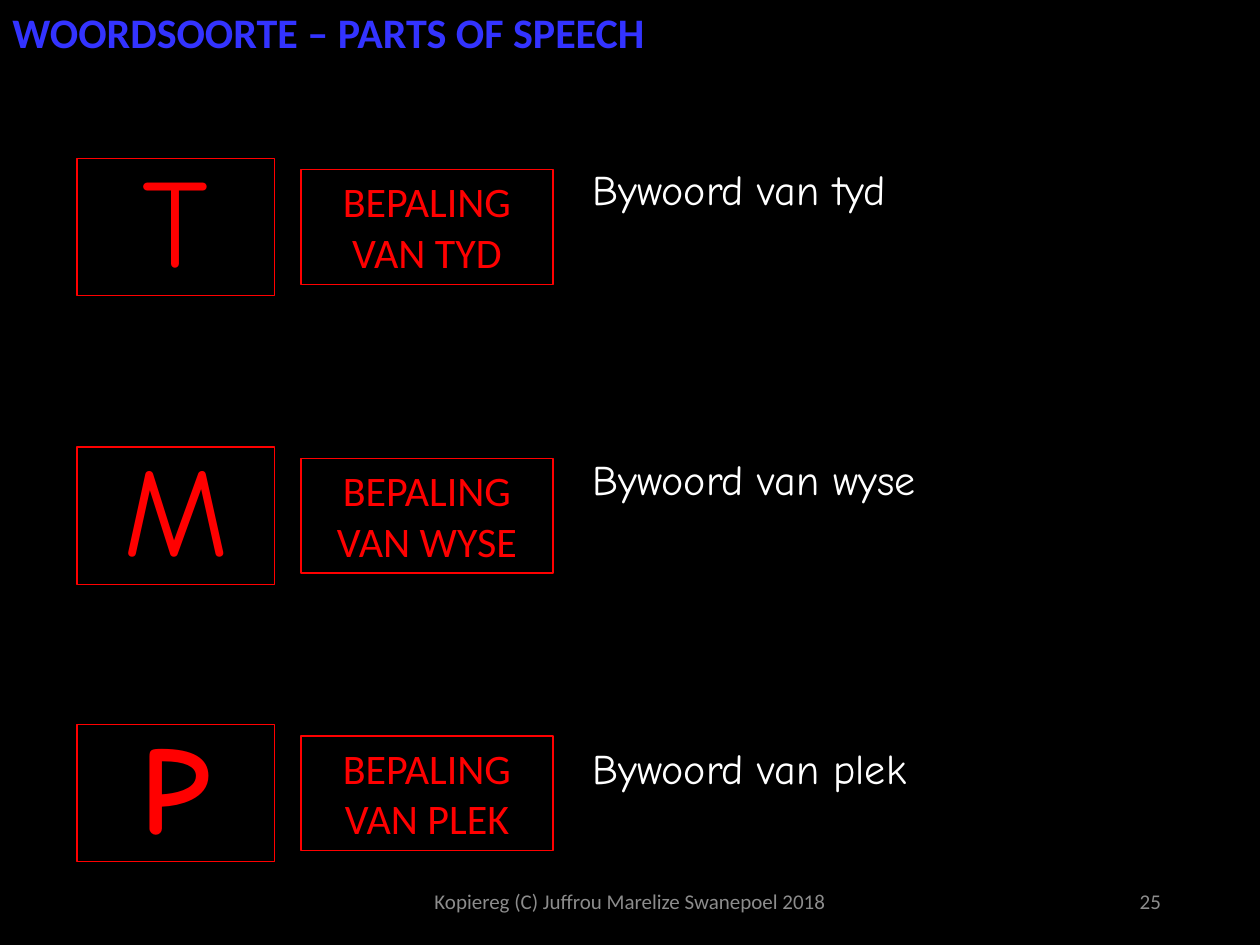
from dataclasses import dataclass

from pptx import Presentation
from pptx.dml.color import RGBColor
from pptx.enum.shapes import MSO_SHAPE as Shape
from pptx.enum.text import MSO_ANCHOR as Anchor, MSO_AUTO_SIZE as AutoSize, PP_ALIGN as Align
from pptx.util import Pt

COLORS = {
    "black": "000000",
    "red": "FF0000",
    "white": "FFFFFF",
    "blue": "3333FF",
    "grey": "8C8C8C",
}
SANS, HAND = "Calibri", "Comic Neue"


@dataclass(frozen=True)
class Box:
    left: float
    top: float
    width: float
    height: float

    def lengths(self) -> tuple:
        return Pt(self.left), Pt(self.top), Pt(self.width), Pt(self.height)


@dataclass(frozen=True)
class Style:
    font: str
    size: float
    color: str
    bold: bool = False
    align: Align = Align.LEFT
    anchor: Anchor = Anchor.TOP
    grow: bool = False


@dataclass(frozen=True)
class Adverbial:
    letter: str
    label: str
    adverb: str
    top: float
    adverb_top: float
    bold: bool = False


LABEL = Style(SANS, 24, "red", align=Align.CENTER, grow=True)
ADVERB = Style(HAND, 24, "white", grow=True)
TITLE = Style(SANS, 24, "blue", bold=True, anchor=Anchor.MIDDLE, grow=True)
FOOTER = Style(SANS, 12, "grey", align=Align.CENTER, anchor=Anchor.MIDDLE)
PAGE_NUMBER = Style(SANS, 12, "grey", align=Align.RIGHT, anchor=Anchor.MIDDLE)

ADVERBIALS = [
    Adverbial("T", "BEPALING VAN TYD", "Bywoord van tyd", 90.5, 90),
    Adverbial("M", "BEPALING VAN WYSE", "Bywoord van wyse", 255.5, 255.5),
    Adverbial("P", "BEPALING VAN PLEK", "Bywoord van plek", 414, 420.5, bold=True),
]


def rgb(name: str) -> RGBColor:
    return RGBColor.from_string(COLORS[name])


def write(shape, text: str, style: Style):
    """Put one styled paragraph in the shape and return it."""
    frame = shape.text_frame
    frame.word_wrap = True
    frame.auto_size = AutoSize.SHAPE_TO_FIT_TEXT if style.grow else AutoSize.NONE
    frame.vertical_anchor = style.anchor
    paragraph = frame.paragraphs[0]
    paragraph.text = text
    paragraph.alignment = style.align
    font = paragraph.font
    font.name, font.size, font.bold = style.font, Pt(style.size), style.bold
    font.color.rgb = rgb(style.color)
    return paragraph


def add_text(slide, box: Box, text: str, style: Style) -> None:
    write(slide.shapes.add_textbox(*box.lengths()), text, style)


def add_frame(slide, box: Box):
    """Add a rectangle with a thin red outline."""
    frame = slide.shapes.add_shape(Shape.RECTANGLE, *box.lengths())
    frame.shadow.inherit = False
    frame.fill.background()
    frame.line.color.rgb = rgb("red")
    frame.line.width = Pt(0.75)
    return frame


def add_adverbial(slide, item: Adverbial) -> None:
    # Large initial
    initial = add_frame(slide, Box(44, item.top, 113, 78.5))
    initial.fill.solid()
    initial.fill.fore_color.rgb = rgb("black")
    style = Style(HAND, 72, "red", item.bold, Align.CENTER, Anchor.MIDDLE)
    write(initial, item.letter, style).line_spacing = 0.9
    text = initial.text_frame
    text.margin_left = text.margin_right = text.margin_top = text.margin_bottom = Pt(7.2)

    # Name of the adverbial, then its adverb
    write(add_frame(slide, Box(172, item.top + 6.5, 144, 65.5)), item.label, LABEL)
    add_text(slide, Box(331.5, item.adverb_top, 377, 36), item.adverb, ADVERB)


def main() -> None:
    deck = Presentation()
    deck.slide_width, deck.slide_height = Pt(720), Pt(540)
    slide = deck.slides.add_slide(deck.slide_layouts[6])
    slide.background.fill.solid()
    slide.background.fill.fore_color.rgb = rgb("black")

    # Title
    add_text(slide, Box(0, 0, 390, 36), "WOORDSOORTE – PARTS OF SPEECH", TITLE)

    # Rows
    for item in ADVERBIALS:
        add_adverbial(slide, item)

    # Footer
    add_text(slide, Box(238.5, 500.5, 243, 28.75),
             "Kopiereg (C) Juffrou Marelize Swanepoel 2018", FOOTER)
    add_text(slide, Box(508.5, 500.5, 162, 28.75), "25", PAGE_NUMBER)

    deck.save("out.pptx")


if __name__ == "__main__":
    main()
